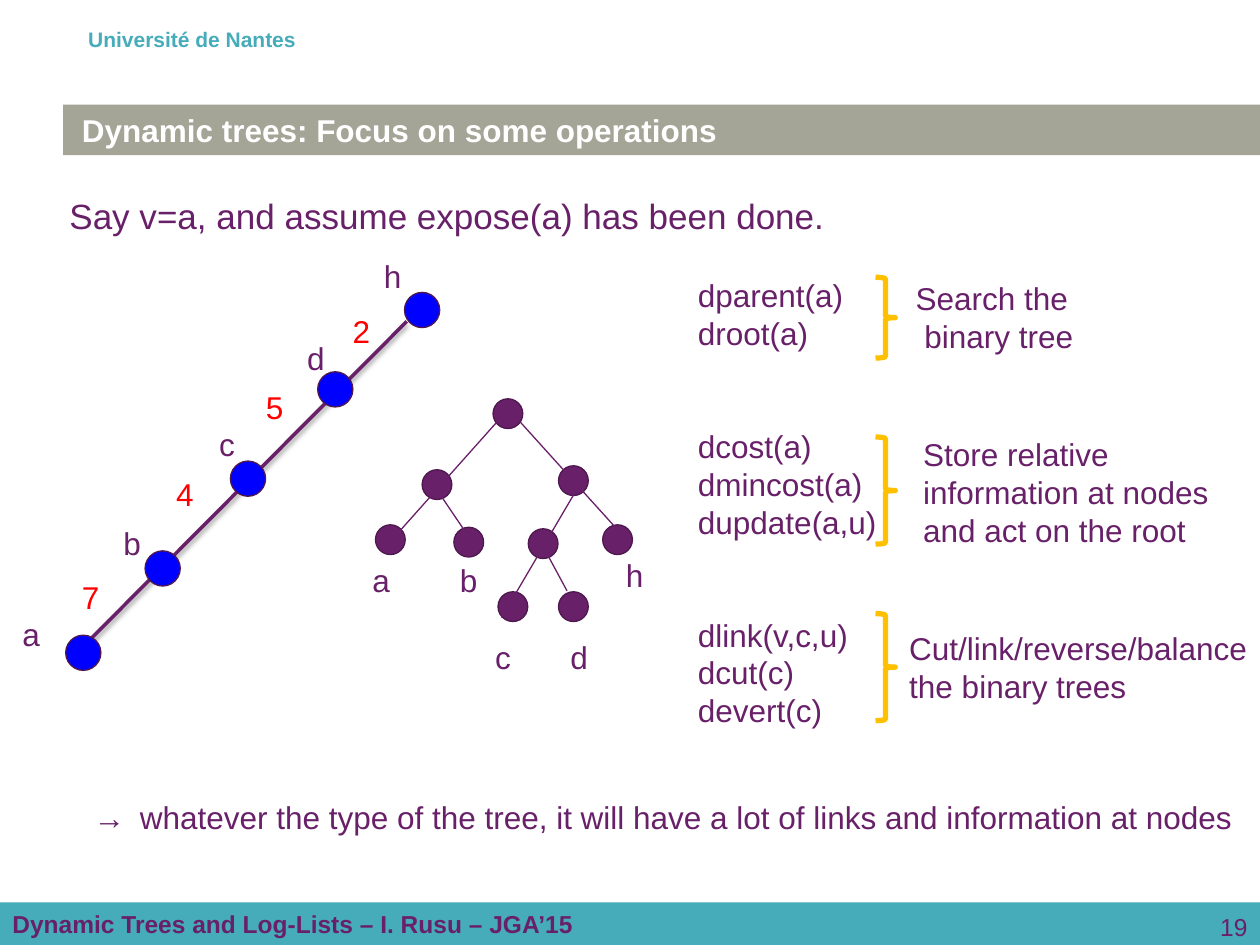
import pptx
import pptx.dml.color
import pptx.enum.shapes
import pptx.enum.text
import pptx.oxml
import pptx.oxml.ns
import pptx.util
from pptx.util import Cm

SHAPE = pptx.enum.shapes.MSO_SHAPE
ALIGN = pptx.enum.text.PP_ALIGN
ANCHOR = pptx.enum.text.MSO_ANCHOR

THEME = {
    "font": "Arial",
    "purple": "682069", "outline": "4E184F", "teal": "46ACBA", "gray": "A4A597",
    "blue": "0000FF", "red": "FF0000", "amber": "FFC000", "white": "FFFFFF",
    "lead": 20, "text": 18, "footer": 14, "header": 12,
    "thin": 0.75, "path": 2, "brace": 3,
}

# All positions and sizes are in centimetres.
SLIDE_SIZE = (25.4, 19.05)
HEADER = "Université de Nantes"
FOOTER = "Dynamic Trees and Log-Lists – I. Rusu – JGA’15"
PAGE = "19"
TITLE = "Dynamic trees: Focus on some operations"
LEAD = "Say v=a, and assume expose(a) has been done."
ARROW = "→"
CONCLUSION = ("whatever the type of the tree, it will have a lot of links "
              "and information at nodes")

PATH_LINE = ((1.6, 13.11), (8.2, 6.48))
PATH_NODES = [(1.68, 13.16), (3.28, 11.46), (5, 9.65), (6.76, 7.85), (8.51, 6.25)]
PATH_NODE_SIZE = 0.71
PATH_LABELS = [("a", 0.2, 12.27), ("b", 2.24, 10.44), ("c", 4.17, 8.43),
               ("d", 5.94, 6.71), ("h", 7.49, 5.05)]
PATH_COSTS = [("7", 1.4, 11.53), ("4", 3.3, 9.45), ("5", 5.11, 7.7), ("2", 6.86, 6.17)]

TREE_NODES = [(10.24, 8.34), (8.81, 9.77), (11.56, 9.69), (7.87, 10.88), (9.45, 10.93),
              (10.95, 10.96), (12.45, 10.88), (10.34, 12.23), (11.56, 12.23)]
TREE_NODE_SIZE = 0.6
TREE_LINES = [((8, 10.77), (10.13, 8.38)), ((10.49, 8.51), (12.62, 10.87)),
              ((8.71, 9.73), (9.55, 10.97)), ((11.56, 9.98), (10.11, 12.45)),
              ((11.02, 11.15), (11.43, 11.91))]
LEAF_LABELS = [("a", 7.26, 11.18), ("b", 9.02, 11.18), ("c", 9.73, 12.73),
               ("d", 11.25, 12.73), ("h", 12.37, 11.07)]

OPERATIONS_LEFT, OPERATIONS_TOP, LINE_PITCH = 13.82, 5.44, 0.76
BRACE_LEFT, BRACE_WIDTH = 17.65, 0.4
OPERATION_GROUPS = [
    {"first_line": 0, "operations": ["dparent(a)", "droot(a)"],
     "brace": (5.59, 1.63), "note": ["Search the", " binary tree"],
     "note_at": (18.21, 5.49)},
    {"first_line": 4, "operations": ["dcost(a)", "dmincost(a)", "dupdate(a,u)"],
     "brace": (8.81, 2.16),
     "note": ["Store relative", "information at nodes", "and act on the root"],
     "note_at": (18.36, 8.64)},
    {"first_line": 9, "operations": ["dlink(v,c,u)", "dcut(c)", "devert(c)"],
     "brace": (12.37, 2.16), "note": ["Cut/link/reverse/balance", "the binary trees"],
     "note_at": (18.08, 12.55)},
]


def color(name):
    return pptx.dml.color.RGBColor.from_string(THEME[name])


def set_all(target, values):
    for name, value in values.items():
        setattr(target, name, value)


def write(shape, lines, size="text", ink="purple", bold=False, align=ALIGN.LEFT,
          anchor=ANCHOR.TOP, insets=(0.25, 0.13)):
    """Fill a shape with one paragraph per line."""
    left, top = insets
    frame = shape.text_frame
    frame.text = "\n".join(lines)
    set_all(frame, {"word_wrap": True, "vertical_anchor": anchor,
                    "auto_size": pptx.enum.text.MSO_AUTO_SIZE.NONE,
                    "margin_left": Cm(left), "margin_right": Cm(0),
                    "margin_top": Cm(top), "margin_bottom": Cm(top)})
    for paragraph in frame.paragraphs:
        paragraph.alignment = align
        for run in paragraph.runs:
            set_all(run.font, {"name": THEME["font"], "bold": bold,
                               "size": pptx.util.Pt(THEME[size])})
            run.font.color.rgb = color(ink)


def add_text(slide, lines, left, top, width, height, **style):
    box = slide.shapes.add_textbox(Cm(left), Cm(top), Cm(width), Cm(height))
    write(box, lines, **style)
    return box


def add_labels(slide, labels, ink="purple"):
    for text, left, top in labels:
        add_text(slide, [text], left, top, 0.9, 1.02, ink=ink)


def add_shape(slide, kind, left, top, width, height, fill=None, line=None, weight="thin"):
    shape = slide.shapes.add_shape(kind, Cm(left), Cm(top), Cm(width), Cm(height))
    shape.shadow.inherit = False
    if fill:
        shape.fill.solid()
        shape.fill.fore_color.rgb = color(fill)
    else:
        shape.fill.background()
    if line:
        shape.line.color.rgb = color(line)
        shape.line.width = pptx.util.Pt(THEME[weight])
    else:
        shape.line.fill.background()
    return shape


def add_nodes(slide, centers, size, fill):
    for x, y in centers:
        add_shape(slide, SHAPE.OVAL, x - size / 2, y - size / 2, size, size, fill, "outline")


def add_line(slide, start, end, weight, shadow=""):
    line = slide.shapes.add_connector(pptx.enum.shapes.MSO_CONNECTOR.STRAIGHT,
                                      *(Cm(value) for value in start + end))
    line.line.color.rgb = color("purple")
    line.line.width = pptx.util.Pt(THEME[weight])
    line._element.spPr.append(pptx.oxml.parse_xml(
        f"<a:effectLst {pptx.oxml.ns.nsdecls('a')}>{shadow}</a:effectLst>"))


def add_frame(slide):
    """Place the header, the footer, the page number and the title."""
    width = SLIDE_SIZE[0]
    add_text(slide, [HEADER], 0, 0.41, width, 0.76, size="header", ink="teal",
             bold=True, insets=(1.78, 0.13))
    bar = add_shape(slide, SHAPE.RECTANGLE, 0, 18.19, width, 0.86, fill="teal")
    write(bar, [FOOTER], size="footer", bold=True, anchor=ANCHOR.MIDDLE)
    add_text(slide, [PAGE], 19.48, 18.26, 5.67, 0.79, size="footer", align=ALIGN.RIGHT)

    title = slide.shapes.title
    set_all(title, {"left": Cm(1.27), "top": Cm(2.11),
                    "width": Cm(24.13), "height": Cm(1.02)})
    title.fill.solid()
    title.fill.fore_color.rgb = color("gray")
    write(title, [TITLE], ink="white", bold=True, anchor=ANCHOR.MIDDLE, insets=(0.38, 0.13))


def add_conclusion(slide):
    box = add_text(slide, [f"{ARROW}\t{CONCLUSION}"], 1.64, 15.95, 23.76, 1.02)
    properties = box.text_frame.paragraphs[0]._p.get_or_add_pPr()
    properties.append(pptx.oxml.parse_xml(
        f"<a:tabLst {pptx.oxml.ns.nsdecls('a')}>"
        f'<a:tab pos="{Cm(0.93)}" algn="l"/></a:tabLst>'))


def main():
    presentation = pptx.Presentation()
    presentation.slide_width, presentation.slide_height = map(Cm, SLIDE_SIZE)
    slide = presentation.slides.add_slide(presentation.slide_layouts[5])
    add_frame(slide)
    add_text(slide, [LEAD], 1.4, 3.92, 24, 1.19, size="lead", insets=(0, 0))

    shadow = (f'<a:outerShdw blurRad="{pptx.util.Pt(3.1)}" dist="{pptx.util.Pt(1.6)}" '
              'dir="5400000" rotWithShape="0"><a:srgbClr val="000000">'
              '<a:alpha val="38000"/></a:srgbClr></a:outerShdw>')
    add_line(slide, *PATH_LINE, "path", shadow)
    add_nodes(slide, PATH_NODES, PATH_NODE_SIZE, "blue")
    add_labels(slide, PATH_LABELS)
    add_labels(slide, PATH_COSTS, ink="red")

    add_nodes(slide, TREE_NODES, TREE_NODE_SIZE, "purple")
    for start, end in TREE_LINES:
        add_line(slide, start, end, "thin")
    add_labels(slide, LEAF_LABELS)

    for group in OPERATION_GROUPS:
        operations, note = group["operations"], group["note"]
        add_text(slide, operations, OPERATIONS_LEFT,
                 OPERATIONS_TOP + group["first_line"] * LINE_PITCH,
                 4.14, len(operations) * LINE_PITCH + 0.26)
        brace_top, brace_height = group["brace"]
        add_shape(slide, SHAPE.RIGHT_BRACE, BRACE_LEFT, brace_top, BRACE_WIDTH,
                  brace_height, line="amber", weight="brace")
        note_left, note_top = group["note_at"]
        add_text(slide, note, note_left, note_top, SLIDE_SIZE[0] - note_left,
                 len(note) * LINE_PITCH + 0.26)

    add_conclusion(slide)
    presentation.save("out.pptx")


if __name__ == "__main__":
    main()
